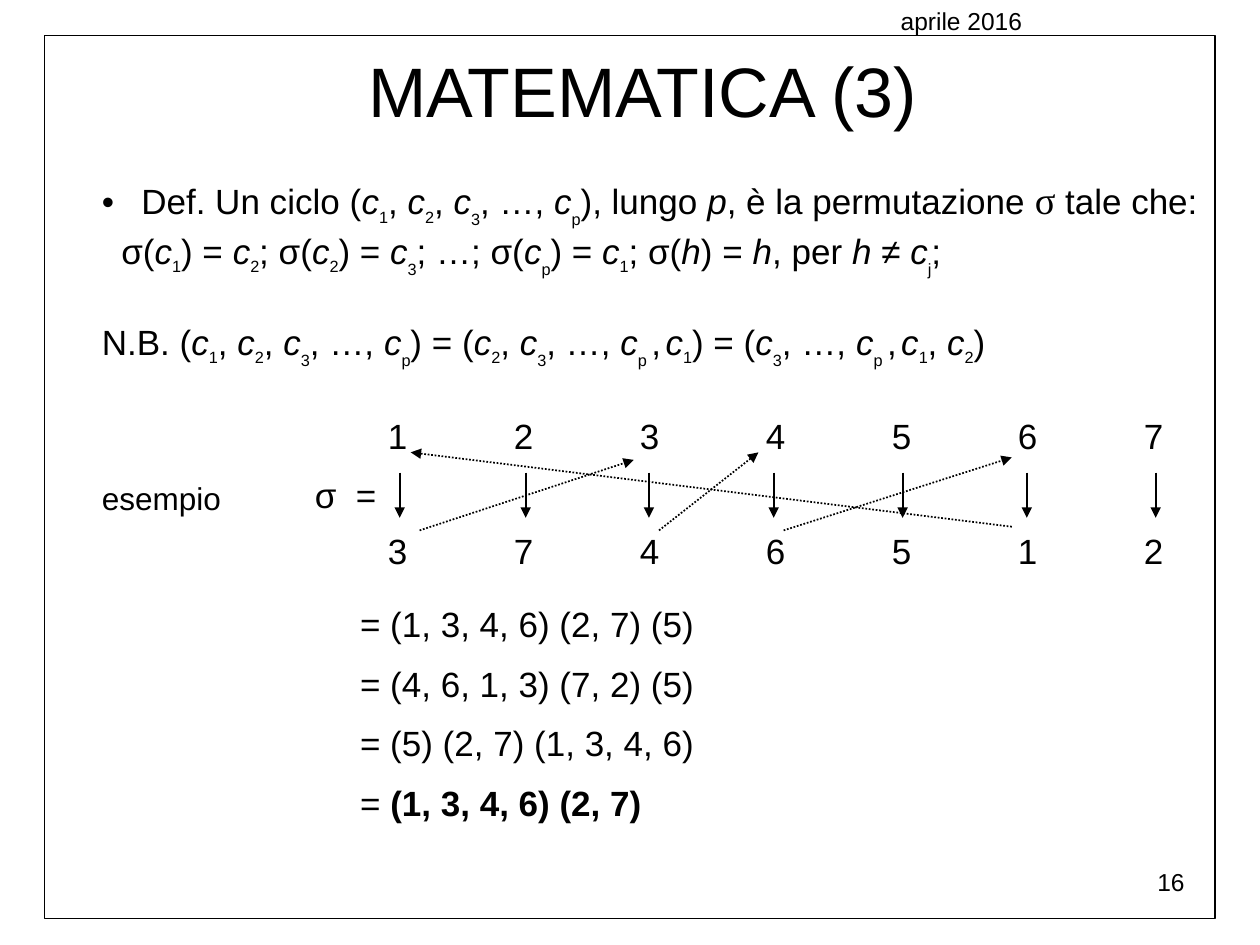
from dataclasses import dataclass
from lxml.etree import SubElement
from pptx import Presentation
from pptx.dml.color import RGBColor
from pptx.enum.dml import MSO_LINE
from pptx.enum.shapes import MSO_CONNECTOR, MSO_SHAPE
from pptx.enum.text import PP_ALIGN
from pptx.oxml.ns import qn
from pptx.util import Pt

BLACK = "000000"
COLUMN_STEP = 72


@dataclass(frozen=True)
class Label:
    text: str
    left: float
    top: float
    width: float
    height: float
    size: float = 20
    align: PP_ALIGN = PP_ALIGN.LEFT
    space_before: float = 0


@dataclass(frozen=True)
class Arrow:
    start: tuple[float, float]
    end: tuple[float, float]
    dotted: bool = False


@dataclass(frozen=True)
class Formula:
    markup: str
    margin: float = 0
    bullet: bool = False
    space_before: float = 0


def color(hex_code: str) -> RGBColor:
    return RGBColor.from_string(hex_code)


def style_run(run, size: float, font: str = "Arial") -> None:
    run.font.size = Pt(size)
    run.font.name = font
    run.font.color.rgb = color(BLACK)


def add_tab_stops(paragraph, count: int) -> None:
    stops = SubElement(paragraph._p.get_or_add_pPr(), qn("a:tabLst"))
    for column in range(1, count + 1):
        position = str(Pt(column * COLUMN_STEP))
        SubElement(stops, qn("a:tab"), pos=position, algn="l")


def add_label(slide, label: Label):
    box = slide.shapes.add_textbox(
        Pt(label.left), Pt(label.top), Pt(label.width), Pt(label.height)
    )
    frame = box.text_frame
    frame.word_wrap = True
    frame.text = label.text
    for paragraph in frame.paragraphs:
        paragraph.alignment = label.align
        paragraph.space_before = Pt(label.space_before)
        if "\t" in label.text:
            add_tab_stops(paragraph, label.text.count("\t"))
        for run in paragraph.runs:
            style_run(run, label.size)
    return frame


def add_arrow(slide, arrow: Arrow) -> None:
    connector = slide.shapes.add_connector(
        MSO_CONNECTOR.STRAIGHT, *map(Pt, arrow.start + arrow.end)
    )
    connector.line.color.rgb = color(BLACK)
    connector.line.width = Pt(1)
    if arrow.dotted:
        connector.line.dash_style = MSO_LINE.ROUND_DOT
    properties = connector._element.spPr
    SubElement(properties.find(qn("a:ln")), qn("a:tailEnd"), type="triangle")
    SubElement(properties, qn("a:effectLst"))


def write_formula(paragraph, formula: Formula) -> None:
    paragraph.space_before = Pt(formula.space_before)
    properties = paragraph._p.get_or_add_pPr()
    properties.set("marL", str(Pt(formula.margin)))
    if formula.bullet:
        properties.set("indent", str(-Pt(formula.margin)))
        SubElement(properties, qn("a:buFont"), typeface="Arial")
        SubElement(properties, qn("a:buChar"), char="•")
    for piece in formula.markup.split("|"):
        mark = piece[:1] if piece[:1] in ("*", "_", "^") else ""
        run = paragraph.add_run()
        run.text = piece[len(mark):]
        if mark == "_":
            style_run(run, 16)
            depth = -30000 if run.text in ("1", "2") else -40000
            run._r.get_or_add_rPr().set("baseline", str(depth))
        elif mark == "^":
            style_run(run, 22, "Times New Roman")
        else:
            style_run(run, 20)
            run.font.italic = mark == "*"


LABELS = (
    Label("16", 516.2, 491.8, 167.8, 37.4, 14, PP_ALIGN.RIGHT),
    Label("MATEMATICA (3)", 39.6, 23.4, 655.2, 55.4, 40, PP_ALIGN.CENTER),
    Label("1\t2\t3\t4\t5\t6\t7", 214.6, 233.3, 475.9, 26),
    Label("σ  =", 172.8, 267.1, 60, 31),
    Label("3\t7\t4\t6\t5\t1\t2", 214.6, 298.8, 475.9, 31.7),
    Label("esempio", 51.1, 270, 85, 28.8, 18),
    Label("aprile 2016", 507.6, 0, 158.4, 49.7, 14),
)

ARROW_COLUMNS = (228.4, 300.4, 370.8, 442.1, 515.8, 586.8, 660.4)
CYCLE_ARROWS = (
    Arrow((239.8, 303.1), (362.2, 262.8), True),
    Arrow((376.6, 303.1), (433.4, 258.5), True),
    Arrow((447.8, 303.1), (578.2, 261.4), True),
    Arrow((578.2, 301), (234.7, 258.5), True),
)

FORMULAS = (
    Formula(
        " Def. Un ciclo (|*c|_1|, |*c|_2|, |*c|_3|, …, |*c|_p|), lungo |*p"
        "|, è la permutazione |^σ |tale che:",
        margin=17,
        bullet=True,
    ),
    Formula(
        "σ(|*c|_1|) = |*c|_2|; σ(|*c|_2|) = |*c|_3|; …; σ(|*c|_p|) = |*c|_1"
        "|; σ(|*h|) = |*h|, per |*h |≠ |*c|_j|;",
        margin=11.1,
    ),
    Formula(
        "N.B. (|*c|_1|, |*c|_2|, |*c|_3|, …, |*c|_p|) = (|*c|_2|, |*c|_3|, …, "
        "|*c|_p |,|_ |*c|_1|) = (|*c|_3|, …, |*c|_p |,|_ |*c|_1|, |*c|_2|)",
        space_before=24,
    ),
)

CYCLE_FORMS = Label(
    "= (1, 3, 4, 6) (2, 7) (5)\n= (4, 6, 1, 3) (7, 2) (5)\n"
    "= (5) (2, 7) (1, 3, 4, 6)\n= (1, 3, 4, 6) (2, 7)",
    198.7, 340.8, 484.6, 140.4, space_before=10,
)


def main() -> None:
    presentation = Presentation()
    presentation.slide_width, presentation.slide_height = Pt(720), Pt(540)
    slide = presentation.slides.add_slide(presentation.slide_layouts[6])

    for label in LABELS:
        add_label(slide, label)

    definition = add_label(slide, Label("", 51.1, 97.2, 646.6, 105.8))
    for index, formula in enumerate(FORMULAS):
        line = definition.add_paragraph() if index else definition.paragraphs[0]
        write_formula(line, formula)

    for x in ARROW_COLUMNS:
        add_arrow(slide, Arrow((x, 270), (x, 295.9)))
    for arrow in CYCLE_ARROWS:
        add_arrow(slide, arrow)

    reduced_form = add_label(slide, CYCLE_FORMS).paragraphs[-1]
    equals, cycles = reduced_form.runs[0], reduced_form.add_run()
    equals.text, cycles.text = "= ", "(1, 3, 4, 6) (2, 7)"
    style_run(cycles, CYCLE_FORMS.size)
    cycles.font.bold = True

    border = slide.shapes.add_shape(
        MSO_SHAPE.RECTANGLE, Pt(25.4), Pt(20.2), Pt(668.9), Pt(504.7)
    )
    border.shadow.inherit = False
    border.fill.background()
    border.line.color.rgb = color(BLACK)
    border.line.width = Pt(0.75)

    presentation.save("out.pptx")


if __name__ == "__main__":
    main()
